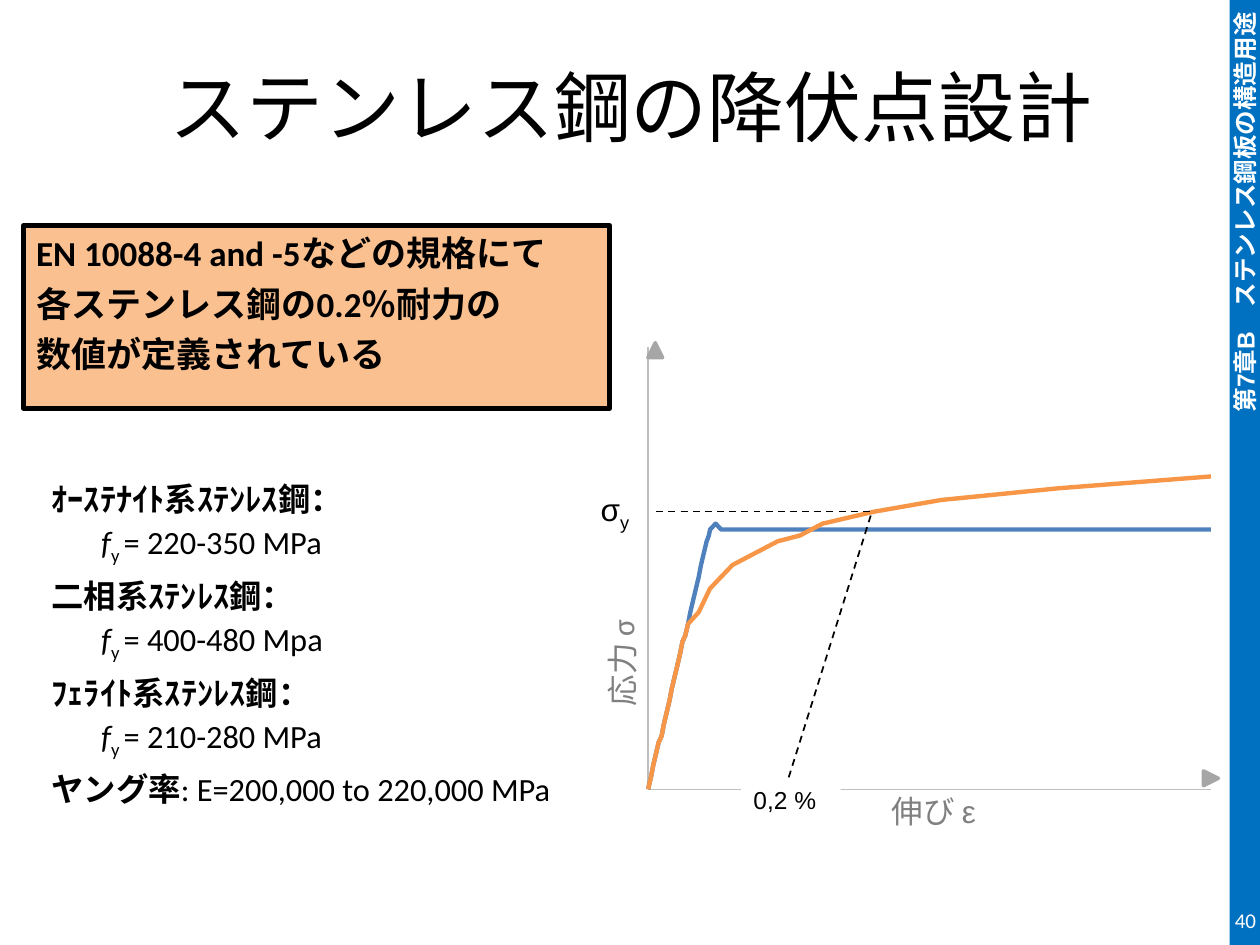
from dataclasses import dataclass

from lxml import etree
from pptx import Presentation, util as u
from pptx.chart.data import XyChartData
from pptx.dml.color import RGBColor
from pptx.enum import chart as ch, dml, shapes as sh, text as tx
from pptx.oxml import parse_xml
from pptx.oxml.ns import nsdecls, qn


@dataclass(frozen=True)
class Theme:
    black: str = "000000"
    white: str = "FFFFFF"
    bar: str = "0070C0"
    callout: str = "FAC090"
    axis: str = "BFBFBF"
    arrow: str = "A6A6A6"
    caption: str = "808080"
    stainless: str = "F79646"
    carbon: str = "4F81BD"
    body: str = "Calibri"
    sans: str = "Arial"
    japanese: str = "Noto Sans CJK JP"
    title_size: float = 44
    callout_size: float = 20
    list_size: float = 18.5
    label_size: float = 18
    small_size: float = 14
    chart_size: float = 10
    page_size: float = 12


def rgb(colour):
    return RGBColor.from_string(colour)


def cm(*lengths):
    return [u.Cm(length) for length in lengths]


class SlideBuilder:
    def __init__(self, slide, theme):
        self.slide, self.theme = slide, theme

    def style(self, run, size, colour=None, face=None, bold=False, italic=False, sub=False):
        font = run.font
        font.size, font.bold, font.italic = u.Pt(size), bold, italic
        font.name = face or self.theme.body
        font.color.rgb = rgb(colour or self.theme.black)
        properties = font._element
        etree.SubElement(properties, qn("a:ea")).set("typeface", self.theme.japanese)
        if sub:
            properties.set("baseline", "-25000")

    def add_runs(self, paragraph, parts, size, colour=None, face=None):
        """Add runs from (words, style overrides) pairs."""
        for words, extra in parts:
            run = paragraph.add_run()
            run.text = words
            self.style(run, size, **{"colour": colour, "face": face, **extra})

    def title(self, words, at):
        heading = self.slide.shapes.title
        heading.left, heading.top, heading.width, heading.height = cm(*at)
        frame = heading.text_frame
        frame.text = words
        frame.vertical_anchor = tx.MSO_ANCHOR.MIDDLE
        frame.paragraphs[0].alignment = tx.PP_ALIGN.CENTER
        self.style(frame.paragraphs[0].runs[0], self.theme.title_size, face=self.theme.japanese)

    def shape(self, kind, at, fill, line=None, width=1, rotation=0):
        item = self.slide.shapes.add_shape(kind, *cm(*at))
        item.shadow.inherit = False
        item.rotation = rotation
        item.fill.solid()
        item.fill.fore_color.rgb = rgb(fill)
        if line:
            item.line.color.rgb = rgb(line)
            item.line.width = u.Pt(width)
        else:
            item.line.fill.background()
        frame = item.text_frame
        frame.vertical_anchor = tx.MSO_ANCHOR.TOP
        frame.paragraphs[0].alignment = tx.PP_ALIGN.LEFT
        return frame

    def textbox(self, at, rotation=0):
        box = self.slide.shapes.add_textbox(*cm(*at))
        box.rotation = rotation
        return box.text_frame

    def dashed_line(self, start, end):
        line = self.slide.shapes.add_connector(sh.MSO_CONNECTOR.STRAIGHT, *cm(*start, *end))
        line.line.color.rgb = rgb(self.theme.black)
        line.line.width = u.Pt(1)
        line.line.dash_style = dml.MSO_LINE.DASH
        etree.SubElement(line._element.spPr, qn("a:effectLst"))

    def curves(self, at, series, limits, inner):
        """Smooth scatter chart; inner is the plot area as fractions of the frame."""
        data = XyChartData()
        for name, _, points in series:
            curve = data.add_series(name)
            for strain, stress in points:
                curve.add_data_point(strain, stress)
        kind = ch.XL_CHART_TYPE.XY_SCATTER_SMOOTH_NO_MARKERS
        chart = self.slide.shapes.add_chart(kind, *cm(*at), data).chart
        chart.has_legend = chart.has_title = False
        chart.font.size, chart.font.name = u.Pt(self.theme.chart_size), self.theme.body
        chart.font.color.rgb = rgb(self.theme.black)
        for axis, limit in zip((chart.category_axis, chart.value_axis), limits):
            axis.minimum_scale, axis.maximum_scale = 0, limit
            axis.has_major_gridlines = False
            axis.major_tick_mark = axis.minor_tick_mark = ch.XL_TICK_MARK.NONE
            axis.tick_label_position = ch.XL_TICK_LABEL_POSITION.NONE
            axis.format.line.color.rgb = rgb(self.theme.axis)
            axis.format.line.width = u.Pt(0.75)
        plot = chart.plots[0]
        plot.vary_by_categories = False
        for curve, (_, colour, _) in zip(plot.series, series):
            curve.smooth = True
            curve.marker.style = ch.XL_MARKER_STYLE.NONE
            curve.format.line.color.rgb = rgb(colour)
            curve.format.line.width = u.Pt(2.5)
        sizes = "".join(f'<c:{tag} val="{part}"/>' for tag, part in zip("xywh", inner))
        layout = parse_xml(
            f'<c:layout {nsdecls("c")}><c:manualLayout><c:layoutTarget val="inner"/>'
            f'<c:xMode val="edge"/><c:yMode val="edge"/>{sizes}</c:manualLayout></c:layout>')
        area = chart._chartSpace.chart.plotArea
        for old in area.findall(qn("c:layout")):
            area.remove(old)
        area.insert(0, layout)


def stress_strain_points():
    stresses = [100 * step / 53 for step in range(54)]
    elastic = [round(stress / 40000, 5) for stress in stresses]
    bent = [0.0009, 0.001, 0.0011, 0.0013, 0.0015, 0.0019, 0.0023, 0.0027, 0.0031, 0.004,
            0.0052, 0.0073, 0.01, 0.0132, 0.02, 0.02, 0.03, 0.04, 0.04, 0.05, 0.07, 0.08,
            0.1, 0.11, 0.13, 0.15, 0.17, 0.2, 0.23, 0.25, 0.29, 0.32, 0.35, 0.39, 0.43,
            0.48, 0.52, 0.57]
    rounded = [round(stress) for stress in stresses]
    stainless = list(zip(elastic[:16] + bent, rounded))
    plateau = [0.0013, 0.0014, 0.0015, 0.0016, 0.0017, 0.0018, 0.003, 0.005, 0.01, 0.015]
    carbon = list(zip(elastic[:24], rounded)) + [(0.0011, 44), (0.0012, 45)]
    return stainless, carbon + [(strain, 44) for strain in plateau]


def main():
    deck = Presentation()
    deck.slide_width, deck.slide_height = cm(25.4, 19.05)
    theme = Theme()
    page = SlideBuilder(deck.slides.add_slide(deck.slide_layouts[5]), theme)
    rectangle, triangle = sh.MSO_SHAPE.RECTANGLE, sh.MSO_SHAPE.ISOSCELES_TRIANGLE
    bold = {"bold": True}

    chapter = page.shape(rectangle, (24.79, 0, 0.61, 19.05), theme.bar)
    chapter._txBody.bodyPr.set("vert", "vert270")
    chapter.margin_left = chapter.margin_right = 0
    chapter.margin_top = chapter.margin_bottom = u.Cm(0.25)
    chapter.vertical_anchor = tx.MSO_ANCHOR.MIDDLE
    chapter.paragraphs[0].alignment = tx.PP_ALIGN.RIGHT
    page.add_runs(chapter.paragraphs[0], [("第7章B　ステンレス鋼板の構造用途", bold)],
                  theme.small_size, theme.white, theme.sans)

    page.title("ステンレス鋼の降伏点設計", (1.3, 0.51, 22.86, 3.25))

    strengths = page.textbox((0.79, 9.35, 11.23, 6.9))
    strengths.word_wrap = True
    rows = []
    for family, strength in (("ｵｰｽﾃﾅｲﾄ系", "220-350 MPa"), ("二相系", "400-480 Mpa"),
                             ("ﾌｪﾗｲﾄ系", "210-280 MPa")):
        rows.append((0, [(f"{family}ｽﾃﾝﾚｽ鋼：", bold)]))
        rows.append((1, [("f", {"italic": True}), ("y ", {"sub": True}), (f"= {strength}", {})]))
    rows.append((0, [("ヤング率", bold), (": E=200,000 to 220,000 MPa", {})]))
    for number, (indent, parts) in enumerate(rows):
        row = strengths.add_paragraph() if number else strengths.paragraphs[0]
        row.line_spacing = u.Pt(27.6)
        row._p.get_or_add_pPr().set("marL", str(u.Cm(indent)))
        page.add_runs(row, parts, theme.list_size)

    standard = page.shape(rectangle, (0.48, 4.55, 11.81, 3.68), theme.callout, theme.black, 3)
    standard.text = "EN 10088-4 and -5などの規格にて\n各ステンレス鋼の0.2％耐力の\n数値が定義されている"
    for number, sentence in enumerate(standard.paragraphs):
        sentence.alignment = tx.PP_ALIGN.LEFT
        sentence.space_before = u.Pt(4.7 if number else 0)
        page.style(sentence.runs[0], theme.callout_size, bold=True)

    stainless, carbon = stress_strain_points()
    page.curves((12.83, 6.83, 11.81, 9.25),
                [("Series 1", theme.stainless, stainless), ("Series 2", theme.carbon, carbon)],
                limits=(0.01, 75), inner=(0.02, 0.017, 0.961, 0.965))

    for at, rotation, parts in (
            ((17.73, 15.85, 2.62, 1.07), 0, [("伸び ", {}), ("ε", {"face": theme.sans})]),
            ((11.23, 12.67, 2.62, 1.02), 270, [("応力 σ", {})])):
        caption = page.textbox(at, rotation)
        page.add_runs(caption.paragraphs[0], parts, theme.label_size, theme.caption)
    for corner, rotation in (((24.26, 15.54), 90), ((13.06, 6.91), 0)):
        page.shape(triangle, (*corner, 0.3, 0.3), theme.arrow, theme.arrow, 2, rotation)

    yield_stress = page.textbox((11.86, 9.75, 1.57, 1.02))
    page.add_runs(yield_stress.paragraphs[0], [("σ", {}), ("y", {"sub": True})],
                  theme.label_size, face=theme.sans)
    page.dashed_line((13.23, 10.31), (17.53, 10.31))
    page.dashed_line((15.9, 15.67), (17.58, 10.31))
    offset = page.shape(rectangle, (14.94, 15.7, 2.01, 0.86), theme.white)
    page.add_runs(offset.paragraphs[0], [("0,2 %", {})], theme.small_size, face=theme.sans)

    folio = page.textbox((24.13, 18.03, 1.19, 1.02))
    folio.margin_left = folio.margin_right = folio.margin_top = folio.margin_bottom = 0
    folio.word_wrap = True
    folio.vertical_anchor = tx.MSO_ANCHOR.MIDDLE
    folio.paragraphs[0].alignment = tx.PP_ALIGN.RIGHT
    page.add_runs(folio.paragraphs[0], [("40", {})], theme.page_size, theme.white)

    deck.save("out.pptx")


if __name__ == "__main__":
    main()
